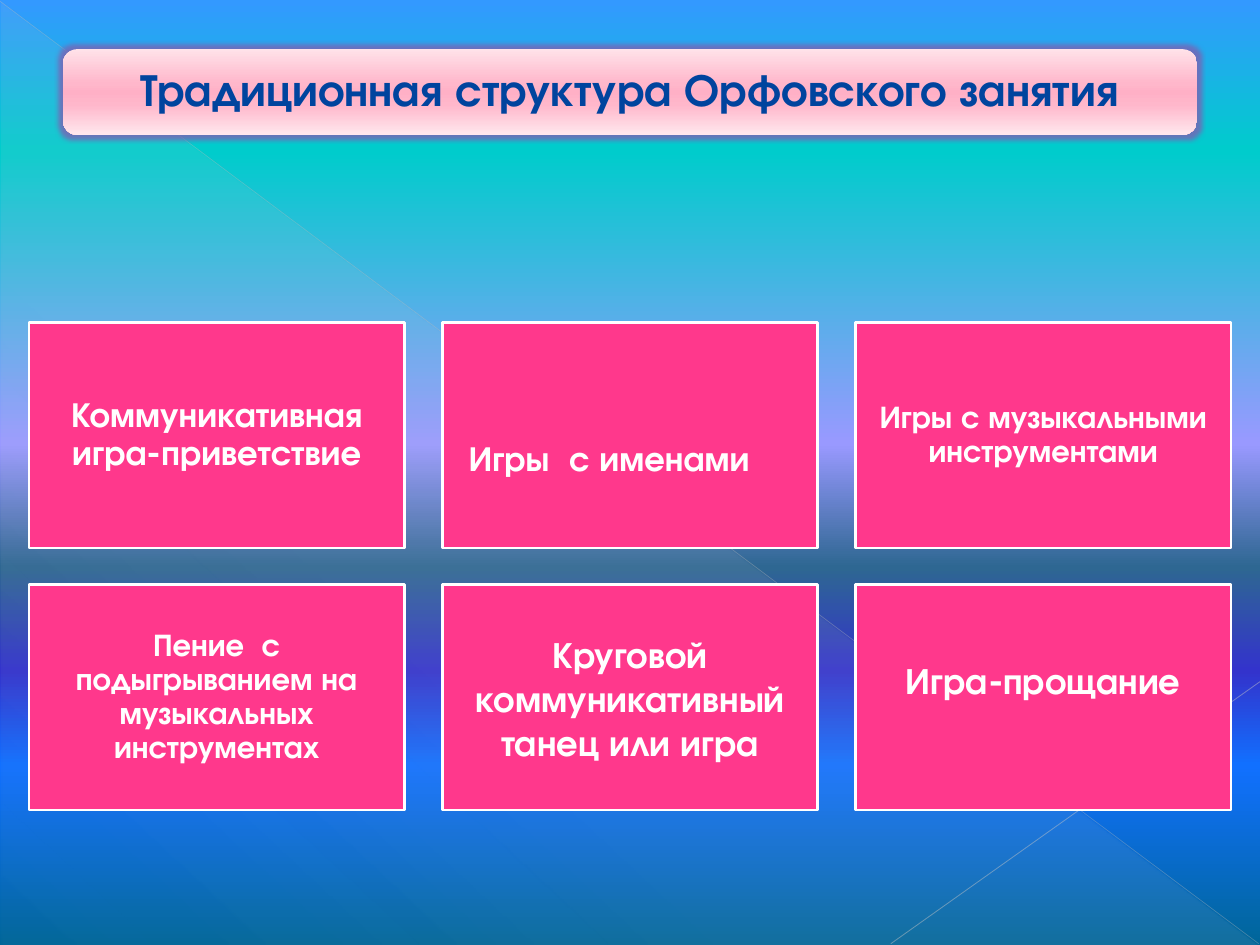
from lxml.etree import SubElement
from pptx import Presentation
from pptx.dml.color import RGBColor
from pptx.enum.shapes import MSO_CONNECTOR, MSO_SHAPE
from pptx.enum.text import MSO_ANCHOR, PP_ALIGN
from pptx.oxml.ns import qn
from pptx.util import Inches, Pt

COLORS = {
    "card": "FF388C", "white": "FFFFFF", "title": "00449E", "glow": "7A62B4",
    "veil": "D2D2D2", "diagonal": "BFBFBF", "corner": "C6C6C6",
}
SKY = [(0, "3399FF"), (16, "00CCCC"), (47, "9999FF"), (60, "2E6792"),
       (71, "3333CC"), (81, "1170FF"), (100, "006699")]
BANNER = [(0, "FFE2E9"), (40, "FFB7CB"), (50, "FFB0C6"), (65, "FFB7CB"), (100, "FFE8EE")]
VEIL = [(0, COLORS["veil"], 10), (70, COLORS["veil"], 8), (100, COLORS["veil"], 1)]


def rgb(name):
    return RGBColor.from_string(COLORS[name])


def add_color(parent, color, opacity=100):
    node = SubElement(parent, qn("a:srgbClr"), val=color)
    if opacity < 100:
        SubElement(node, qn("a:alpha"), val=str(opacity * 1000))


def paint_gradient(fill, owner, stops, angle):
    """Fill with (position, colour[, opacity]) stops; angle runs clockwise."""
    fill.gradient()
    fill.gradient_angle = 360 - angle
    stop_list = owner.find(".//" + qn("a:gsLst"))
    for old_stop in list(stop_list):
        stop_list.remove(old_stop)
    for position, *color in stops:
        add_color(SubElement(stop_list, qn("a:gs"), pos=str(position * 1000)), *color)


def write(shape, text, size, color="white", spacing=0.9, inset=0.08,
          extra_top=0, extra_right=0, extra_bottom=0):
    frame = shape.text_frame
    frame.word_wrap = True
    frame.vertical_anchor = MSO_ANCHOR.MIDDLE
    frame.margin_left = Inches(inset)
    frame.margin_top = Inches(inset + extra_top)
    frame.margin_right = Inches(inset + extra_right)
    frame.margin_bottom = Inches(inset + extra_bottom)
    paragraph = frame.paragraphs[0]
    paragraph.alignment = PP_ALIGN.CENTER
    paragraph.line_spacing = spacing
    run = paragraph.add_run()
    run.text = text
    run.font.name = "TeX Gyre Adventor"
    run.font.size = Pt(size)
    run.font.bold = True
    run.font.color.rgb = rgb(color)


class Deck:
    def __init__(self):
        self.presentation = Presentation()
        self.presentation.slide_width = Inches(10)
        self.presentation.slide_height = Inches(7.5)
        self.slide = self.presentation.slides.add_slide(self.presentation.slide_layouts[6])

    def background(self, stops):
        paint_gradient(self.slide.background.fill, self.slide._element, stops, 90)

    def shape(self, kind, left, top, width, height):
        shape = self.slide.shapes.add_shape(
            kind, Inches(left), Inches(top), Inches(width), Inches(height))
        shape.shadow.inherit = False
        shape.line.fill.background()
        return shape

    def gradient_shape(self, kind, box, stops, angle):
        shape = self.shape(kind, *box)
        paint_gradient(shape.fill, shape._element, stops, angle)
        return shape

    def line(self, start, end, color, width, opacity):
        line = self.slide.shapes.add_connector(
            MSO_CONNECTOR.STRAIGHT, *(Inches(value) for value in (*start, *end)))
        line.line.width = Pt(width)
        line.line.color.rgb = rgb(color)
        tint = line._element.find(".//" + qn("a:srgbClr"))
        SubElement(tint, qn("a:alpha"), val=str(opacity * 1000))
        SubElement(line._element.spPr, qn("a:effectLst"))

    def banner(self, text):
        banner = self.gradient_shape(
            MSO_SHAPE.ROUNDED_RECTANGLE, (0.5, 0.39, 9, 0.68), BANNER, 90)
        effects = banner._element.spPr.find(qn("a:effectLst"))
        glow = SubElement(effects, qn("a:glow"), rad=str(Pt(5)))
        add_color(glow, COLORS["glow"], 80)
        write(banner, text, 26, color="title", inset=0.11)

    def card(self, left, top, text, size, **text_format):
        card = self.shape(MSO_SHAPE.RECTANGLE, left, top, 2.98, 1.79)
        card.fill.solid()
        card.fill.fore_color.rgb = rgb("card")
        card.line.color.rgb = rgb("white")
        card.line.width = Pt(1.5)
        write(card, text, size, **text_format)


def main():
    deck = Deck()
    deck.background(SKY)
    deck.gradient_shape(MSO_SHAPE.RIGHT_TRIANGLE, (0.01, 0.02, 9.98, 7.48), VEIL, 133)
    deck.line((0, 0.01), (9.99, 7.49), "diagonal", 0.39, 35)
    deck.line((10, 5.41), (7.07, 7.49), "corner", 0.47, 45)
    deck.banner("Традиционная структура Орфовского занятия")

    stages = [
        ("Коммуникативная игра-приветствие", 20, {}),
        ("Игры  с именами", 20, {"extra_top": 0.4, "extra_right": 0.33}),
        ("Игры с музыкальными инструментами", 18, {}),
        ("Пение  с подыгрыванием на музыкальных инструментах", 18, {}),
        ("Круговой коммуникативный танец или игра", 21, {"spacing": 1}),
        ("Игра-прощание", 21, {"spacing": 1, "extra_bottom": 0.28}),
    ]
    for index, (text, size, text_format) in enumerate(stages):
        row, column = divmod(index, 3)
        deck.card(0.23 + 3.28 * column, 2.56 + 2.08 * row, text, size, **text_format)

    deck.presentation.save("out.pptx")


if __name__ == "__main__":
    main()
